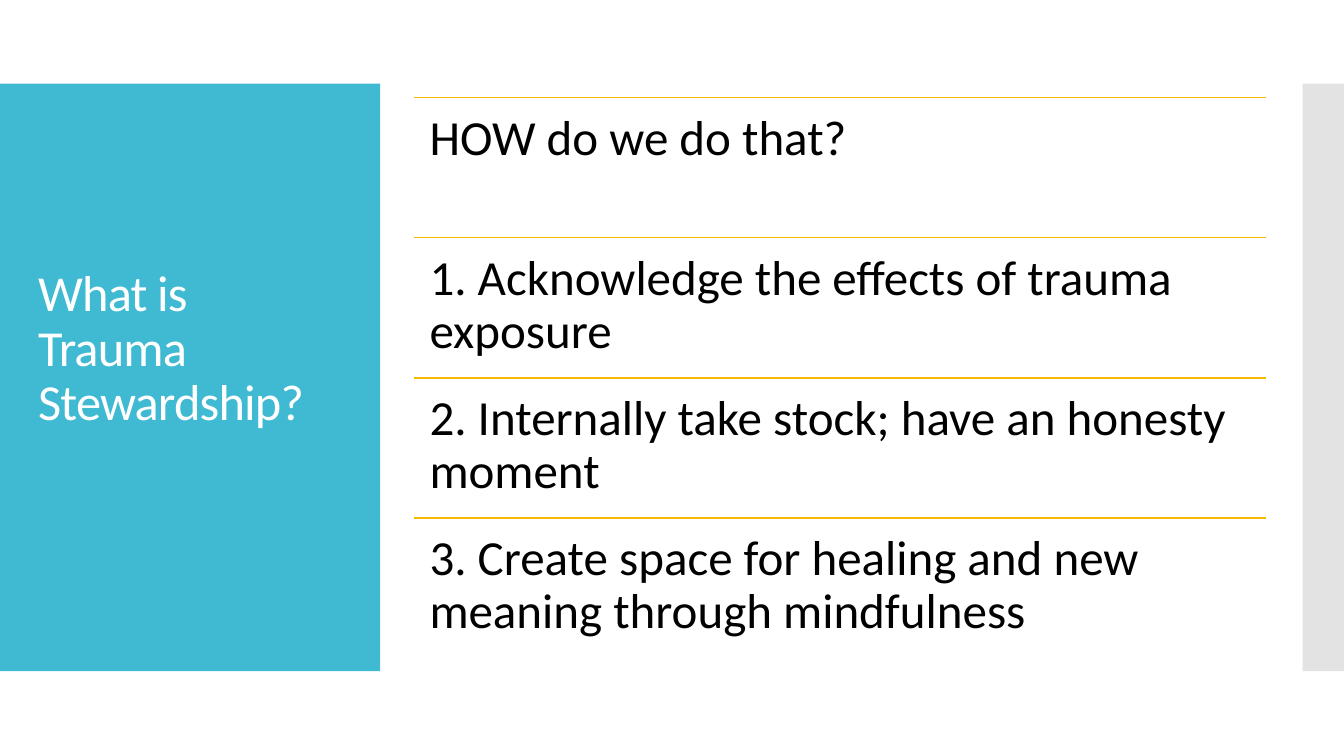
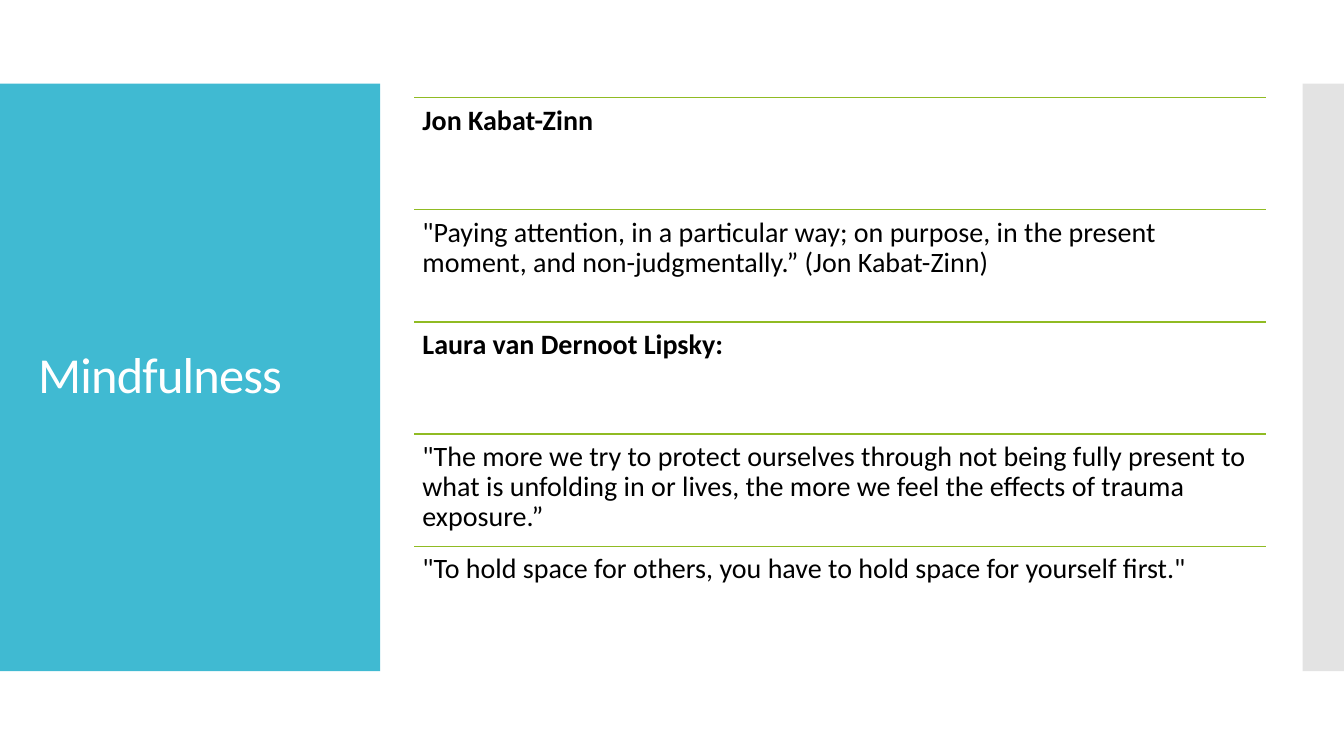
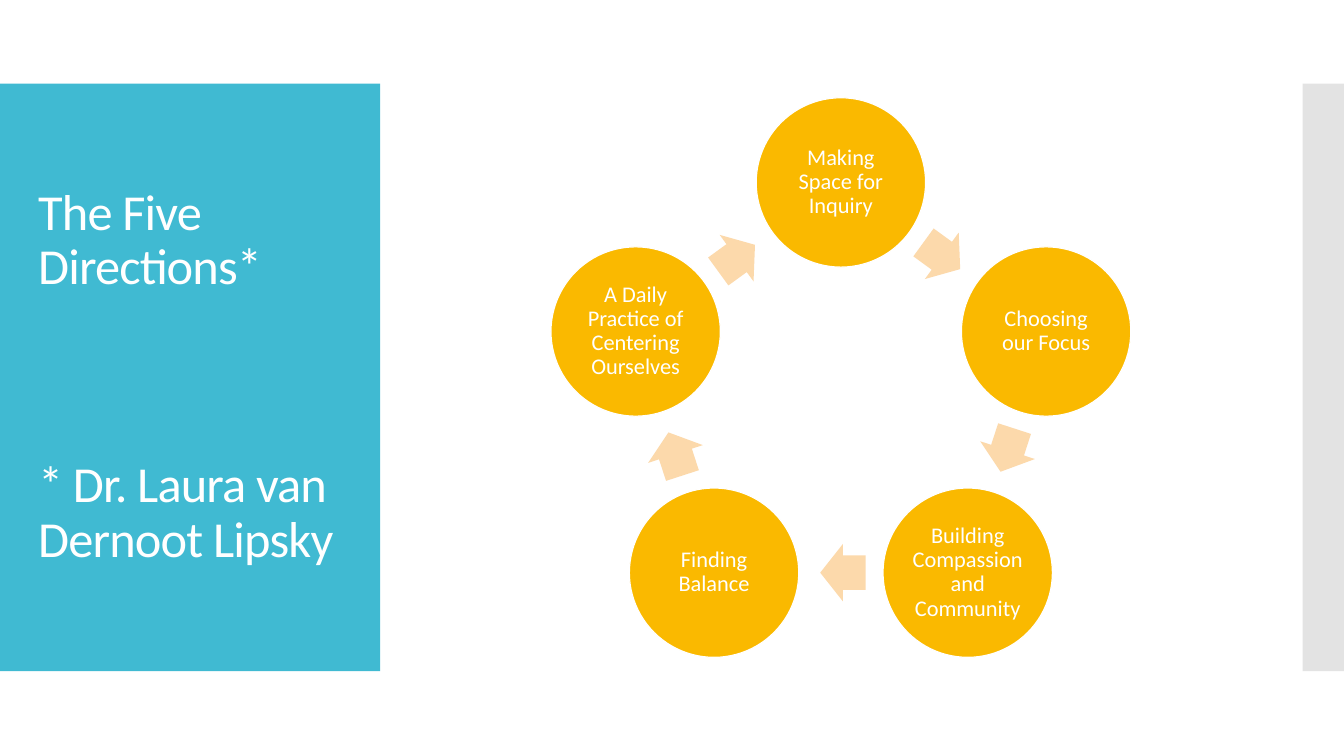
import math
from dataclasses import dataclass

import lxml.etree
import pptx
import pptx.dml.color
import pptx.enum.shapes
import pptx.enum.text
import pptx.oxml.ns
import pptx.shapes.autoshape
import pptx.slide
import pptx.text.text
import pptx.util

Inches = pptx.util.Inches
Pt = pptx.util.Pt
RGBColor = pptx.dml.color.RGBColor
MSO_SHAPE = pptx.enum.shapes.MSO_SHAPE
MSO_ANCHOR = pptx.enum.text.MSO_ANCHOR
PP_ALIGN = pptx.enum.text.PP_ALIGN
qn = pptx.oxml.ns.qn

# Shared look
COLORS = {
    "panel": "40BAD2",
    "edge": "C8C8C8",
    "gold": "FAB900",
    "green": "90BB23",
    "arrow": "FCD9AB",
    "black": "000000",
    "white": "FFFFFF",
}
FONT = "Calibri"
LINE_SPACING = 0.9
RULE_WIDTH = Pt(0.85)
BAND_TOP, BAND_HEIGHT = 0.83, 5.83
LIST_LEFT, LIST_TOP, LIST_WIDTH, LIST_HEIGHT = 4.11, 0.97, 8.45, 5.56

# Cycle geometry
CENTER_X, CENTER_Y, RING_RADIUS = 8.34, 3.95, 2.14
CIRCLE_SIZE = 1.68
ARROW_LENGTH, ARROW_WIDTH, ARROW_SETBACK = 0.45, 0.57, 0.02


@dataclass
class Title:
    paragraphs: list[str]
    gap: float = 0  # points between paragraphs
    bottom_inset: float = 0.05


@dataclass
class Row:
    text: str
    bold: bool = False


@dataclass
class RuledList:
    rows: list[Row]
    rule_color: str
    size: float
    inset: float


def color(key: str) -> RGBColor:
    return RGBColor.from_string(COLORS[key])


def set_insets(frame: pptx.text.text.TextFrame, inset: float) -> None:
    frame.margin_left = frame.margin_right = Inches(inset)
    frame.margin_top = frame.margin_bottom = Inches(inset)


def write(paragraph: pptx.text.text._Paragraph, text: str, size: float,
          text_color: str, bold: bool = False) -> None:
    paragraph.line_spacing = LINE_SPACING
    run = paragraph.add_run()
    run.text = text
    run.font.name = FONT
    run.font.size = Pt(size)
    run.font.bold = bold
    run.font.color.rgb = color(text_color)


def add_filled(slide: pptx.slide.Slide, kind: MSO_SHAPE, left: float, top: float,
               width: float, height: float, fill: str) -> pptx.shapes.autoshape.Shape:
    shape = slide.shapes.add_shape(
        kind, Inches(left), Inches(top), Inches(width), Inches(height))
    shape.shadow.inherit = False
    shape.fill.solid()
    shape.fill.fore_color.rgb = color(fill)
    shape.line.fill.background()
    return shape


def add_rule(slide: pptx.slide.Slide, top: float, rule_color: str) -> None:
    rule = slide.shapes.add_connector(
        pptx.enum.shapes.MSO_CONNECTOR.STRAIGHT, Inches(LIST_LEFT), Inches(top),
        Inches(LIST_LEFT + LIST_WIDTH), Inches(top))
    rule.line.color.rgb = color(rule_color)
    rule.line.width = RULE_WIDTH
    lxml.etree.SubElement(rule.element.spPr, qn("a:effectLst"))


def add_frame(deck: pptx.presentation.Presentation, title: Title) -> pptx.slide.Slide:
    """Start a slide with its two bands and its title."""
    slide = deck.slides.add_slide(deck.slide_layouts[6])
    add_filled(slide, MSO_SHAPE.RECTANGLE, 0, BAND_TOP, 3.77, BAND_HEIGHT, "panel")
    edge = add_filled(slide, MSO_SHAPE.RECTANGLE, 12.92, BAND_TOP, 0.41, BAND_HEIGHT, "edge")
    edge_color = edge.element.spPr.find(qn("a:solidFill")).find(qn("a:srgbClr"))
    lxml.etree.SubElement(edge_color, qn("a:alpha"), val="50000")

    heading = slide.shapes.add_textbox(
        Inches(0.28), Inches(1.23), Inches(3.22), Inches(5.03))
    frame = heading.text_frame
    frame.word_wrap = True
    frame.vertical_anchor = MSO_ANCHOR.MIDDLE
    frame.margin_bottom = Inches(title.bottom_inset)
    for index, text in enumerate(title.paragraphs):
        paragraph = frame.add_paragraph() if index else frame.paragraphs[0]
        if index:
            paragraph.space_before = Pt(title.gap)
        write(paragraph, text, 36, "white")
    for properties in heading.element.iter(qn("a:rPr")):
        properties.set("spc", "-60")
    return slide


def add_ruled_list(slide: pptx.slide.Slide, ruled: RuledList) -> None:
    """Fill the list area with equal rows, each under a rule."""
    row_height = LIST_HEIGHT / len(ruled.rows)
    for index, row in enumerate(ruled.rows):
        top = LIST_TOP + index * row_height
        add_rule(slide, top, ruled.rule_color)
        entry = slide.shapes.add_textbox(
            Inches(LIST_LEFT), Inches(top), Inches(LIST_WIDTH), Inches(row_height))
        frame = entry.text_frame
        frame.word_wrap = True
        set_insets(frame, ruled.inset)
        write(frame.paragraphs[0], row.text, ruled.size, "black", row.bold)


def add_cycle(slide: pptx.slide.Slide, steps: list[str]) -> None:
    """Place the steps clockwise from the top, with an arrow after each."""
    turn = 360 / len(steps)
    for index, step in enumerate(steps):
        angle = math.radians(index * turn)
        x = CENTER_X + RING_RADIUS * math.sin(angle)
        y = CENTER_Y - RING_RADIUS * math.cos(angle)
        circle = add_filled(slide, MSO_SHAPE.OVAL, x - CIRCLE_SIZE / 2,
                            y - CIRCLE_SIZE / 2, CIRCLE_SIZE, CIRCLE_SIZE, "gold")
        circle.line.color.rgb = color("white")
        circle.line.width = RULE_WIDTH
        frame = circle.text_frame
        frame.word_wrap = True
        frame.vertical_anchor = MSO_ANCHOR.MIDDLE
        set_insets(frame, 0.02)
        frame.paragraphs[0].alignment = PP_ALIGN.CENTER
        write(frame.paragraphs[0], step, 16, "white")

        # Arrow halfway to the next circle, set back slightly
        heading = (index + 0.5) * turn
        bearing = math.radians(heading)
        chord = RING_RADIUS * math.cos(math.radians(turn / 2))
        x = CENTER_X + chord * math.sin(bearing) - ARROW_SETBACK * math.cos(bearing)
        y = CENTER_Y - chord * math.cos(bearing) - ARROW_SETBACK * math.sin(bearing)
        arrow = add_filled(slide, MSO_SHAPE.RIGHT_ARROW, x - ARROW_LENGTH / 2,
                           y - ARROW_WIDTH / 2, ARROW_LENGTH, ARROW_WIDTH, "arrow")
        arrow.adjustments[0] = 0.6
        arrow.adjustments[1] = 0.5
        arrow.rotation = heading


def main() -> None:
    deck = pptx.Presentation()
    deck.slide_width = Inches(13.33)
    deck.slide_height = Inches(7.5)

    # Slide 1: stewardship steps
    stewardship = add_frame(
        deck, Title(["What is Trauma Stewardship?"], bottom_inset=0.6))
    add_ruled_list(stewardship, RuledList([
        Row("HOW do we do that?"),
        Row("1. Acknowledge the effects of trauma exposure"),
        Row("2. Internally take stock; have an honesty moment"),
        Row("3. Create space for healing and new meaning through mindfulness"),
    ], rule_color="gold", size=35, inset=0.15))

    # Slide 2: quotations
    mindfulness = add_frame(deck, Title(["Mindfulness"]))
    add_ruled_list(mindfulness, RuledList([
        Row("Jon Kabat-Zinn", bold=True),
        Row('"Paying attention, in a particular way; on purpose, in the present '
            "moment, and non-judgmentally.” (Jon Kabat-Zinn)"),
        Row("Laura van Dernoot Lipsky:", bold=True),
        Row('"The more we try to protect ourselves through not being fully present '
            "to what is unfolding in or lives, the more we feel the effects of "
            "trauma exposure.”"),
        Row('"To hold space for others, you have to hold space for yourself first."'),
    ], rule_color="green", size=20, inset=0.08))

    # Slide 3: five directions
    directions = add_frame(deck, Title(
        ["The Five Directions*", "* Dr. Laura van Dernoot Lipsky"], gap=117))
    add_cycle(directions, [
        "Making Space for Inquiry",
        "Choosing our Focus",
        "Building Compassion and Community",
        "Finding Balance",
        "A Daily Practice of Centering Ourselves",
    ])

    deck.save("out.pptx")


if __name__ == "__main__":
    main()
